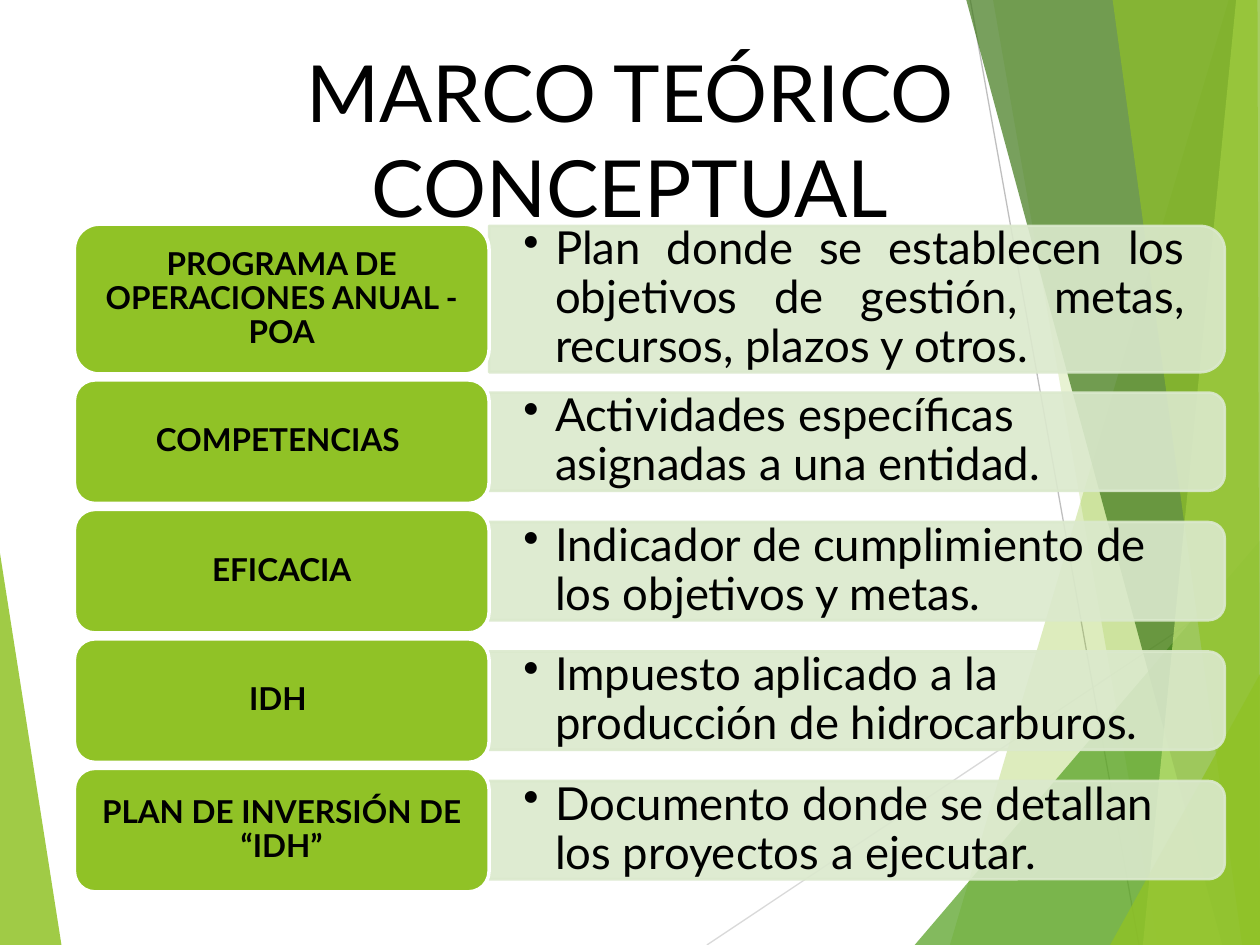
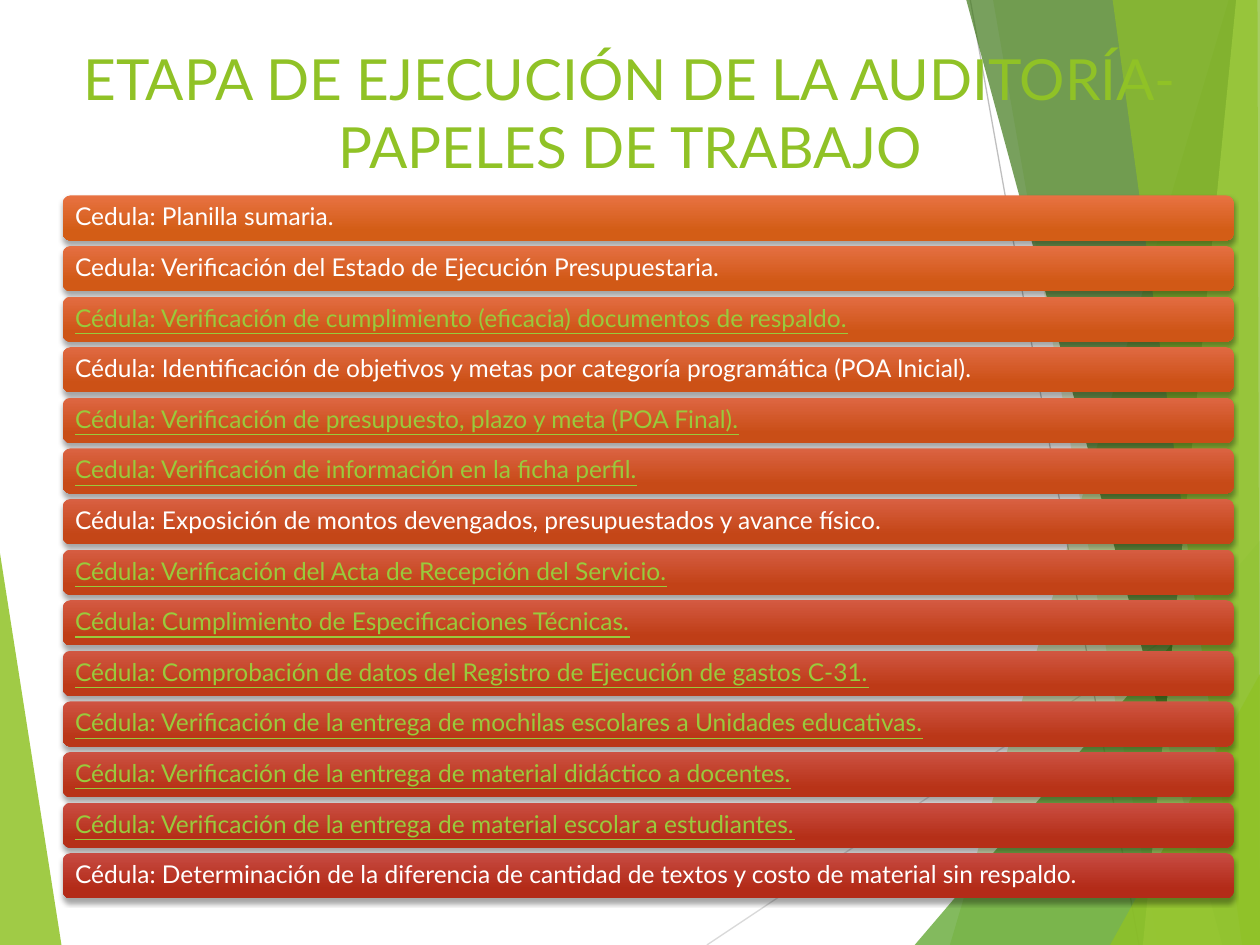
from dataclasses import dataclass
from pptx import Presentation
from pptx.dml.color import RGBColor
from pptx.enum.shapes import MSO_CONNECTOR, MSO_SHAPE
from pptx.enum.text import MSO_ANCHOR, MSO_AUTO_SIZE, PP_ALIGN
from pptx.oxml.ns import qn
from pptx.util import Cm, Pt
from lxml.etree import SubElement


@dataclass(frozen=True)
class Theme:
    font: str = "Lato"
    green: str = "90C226"
    leaf: str = "54A021"
    moss: str = "3F7819"
    lime: str = "C0E474"
    pale: str = "DBE9CD"
    link: str = "99CA3C"
    white: str = "FFFFFF"
    black: str = "000000"
    gleam: tuple = ("E87242", "C74B42")
    depth: tuple = ("D35D16", "B32B18")
    head: float = 45
    subhead: float = 32.4
    note: float = 26
    label: float = 18
    bar: float = 14


T = Theme()
WIDE, HIGH = 25.4, 19.05

FACETS = [
    (T.green, 85, [(0, 11.15), (1.24, HIGH), (0, HIGH)]),
    (T.green, 30, [(24.77, 0), (19.15, HIGH), (WIDE, HIGH), (WIDE, 0)]),
    (T.green, 20, [(20.02, 0), (23.34, HIGH), (WIDE, HIGH), (WIDE, 0)]),
    (T.leaf, 72, [(18.44, HIGH), (WIDE, 10.9), (WIDE, HIGH)]),
    (T.moss, 70, [(19.48, 0), (24.64, HIGH), (WIDE, HIGH), (WIDE, 0)]),
    (T.lime, 70, [(24.92, 0), (23.04, HIGH), (WIDE, HIGH), (WIDE, 0)]),
    (T.green, 65, [(22.43, 0), (25.04, HIGH), (WIDE, HIGH), (25.35, 0)]),
    (T.green, 80, [(22.38, HIGH), (WIDE, 13.59), (WIDE, HIGH)]),
]
RAYS = [
    ("D9D9D9", (14.25, HIGH, WIDE, 11.61)),
    ("BFBFBF", (19.56, 0, 22.96, HIGH)),
]

TERMS = [
    ("PROGRAMA DE OPERACIONES ANUAL - POA",
     "Plan donde se establecen los objetivos de gestión, metas, recursos, plazos y otros.",
     3.02, 2.95, PP_ALIGN.JUSTIFY),
    ("COMPETENCIAS ", "Actividades específicas asignadas a una entidad.",
     2.49, 1.98, PP_ALIGN.LEFT),
    ("EFICACIA", "Indicador de cumplimiento de los objetivos y metas.",
     2.49, 1.98, PP_ALIGN.LEFT),
    ("IDH ", "Impuesto aplicado a la producción de hidrocarburos.",
     2.49, 1.98, PP_ALIGN.LEFT),
    ("PLAN DE INVERSIÓN DE “IDH”", "Documento donde se detallan los proyectos a ejecutar.",
     2.49, 1.98, PP_ALIGN.LEFT),
]

PAPERS = [
    ("Cedula: Planilla sumaria.", False),
    ("Cedula: Verificación del Estado de Ejecución Presupuestaria.", False),
    ("Cédula: Verificación de cumplimiento (eficacia) documentos de respaldo.", True),
    ("Cédula: Identificación de objetivos y metas por categoría programática (POA Inicial).", False),
    ("Cédula: Verificación de presupuesto, plazo y meta (POA Final).", True),
    ("Cedula: Verificación de información en la ficha perfil.", True),
    ("Cédula: Exposición de montos devengados, presupuestados y avance físico.", False),
    ("Cédula: Verificación del Acta de Recepción del Servicio.", True),
    ("Cédula: Cumplimiento de Especificaciones Técnicas.", True),
    ("Cédula: Comprobación de datos del Registro de Ejecución de gastos C-31.", True),
    ("Cédula: Verificación de la entrega de mochilas escolares a Unidades educativas.", True),
    ("Cédula: Verificación de la entrega de material didáctico a docentes.", True),
    ("Cédula: Verificación de la entrega de material escolar a estudiantes.", True),
    ("Cédula: Determinación de la diferencia de cantidad de textos y costo de material sin respaldo.", False),
]


def rgb(code):
    return RGBColor.from_string(code)


def blend(pair, part):
    first, last = map(rgb, pair)
    return RGBColor(*(round(a + (b - a) * part) for a, b in zip(first, last)))


def fade(shape, percent):
    for tint in list(shape.element.spPr.iter(qn("a:srgbClr"))):
        SubElement(tint, qn("a:alpha")).set("val", str(percent * 1000))


def paint(shape, fill, line=None, width=0):
    shape.shadow.inherit = False
    shape.fill.solid()
    shape.fill.fore_color.rgb = rgb(fill)
    if line:
        shape.line.color.rgb = rgb(line)
        shape.line.width = Pt(width)
    else:
        shape.line.fill.background()


def write(shape, text, size, color, align=PP_ALIGN.LEFT, inset=(0.25, 0.13),
          anchor=MSO_ANCHOR.MIDDLE, space=0.9, bold=False, under=False):
    frame = shape.text_frame
    frame.text = text
    frame.word_wrap = True
    frame.auto_size = MSO_AUTO_SIZE.NONE
    frame.vertical_anchor = anchor
    frame.margin_left = frame.margin_right = Cm(inset[0])
    frame.margin_top = frame.margin_bottom = Cm(inset[1])
    para = frame.paragraphs[0]
    para.alignment = align
    para.line_spacing = space
    font = para.runs[0].font
    font.name, font.size, font.bold, font.underline = T.font, Pt(size), bold, under
    font.color.rgb = rgb(color)
    return para


def bullet(para):
    props = para._p.get_or_add_pPr()
    props.set("marL", str(Cm(0.64)))
    props.set("indent", str(Cm(-0.64)))
    SubElement(props, qn("a:buChar")).set("char", "•")


def draw_facet(slide, color, alpha, points):
    spots = [(Cm(x), Cm(y)) for x, y in points]
    pen = slide.shapes.build_freeform(*spots[0])
    pen.add_line_segments(spots[1:])
    facet = pen.convert_to_shape()
    paint(facet, color)
    fade(facet, alpha)


def draw_ray(slide, color, ends):
    ray = slide.shapes.add_connector(MSO_CONNECTOR.STRAIGHT, *map(Cm, ends))
    ray.line.color.rgb = rgb(color)
    ray.line.width = Pt(0.75)
    SubElement(ray.element.spPr, qn("a:effectLst"))


def new_slide(deck, text, size, color):
    slide = deck.slides.add_slide(deck.slide_layouts[5])
    draw_facet(slide, *FACETS[0])
    for ray in RAYS:
        draw_ray(slide, *ray)
    for facet in FACETS[1:]:
        draw_facet(slide, *facet)
    title = slide.shapes.title
    title.left, title.top, title.width, title.height = map(Cm, (1.27, 0.76, 22.86, 2.67))
    write(title, text, size, color, PP_ALIGN.CENTER, anchor=MSO_ANCHOR.TOP, space=1.0)
    slide.shapes.element.append(title.element)
    return slide


def add_terms(slide):
    left, split, right, gap = 1.5, 9.86, 24.69, 0.12
    top = 4.52
    for name, note, tall, thin, align in TERMS:
        mid = top + tall / 2
        long = right - split
        pane = slide.shapes.add_shape(
            MSO_SHAPE.ROUND_2_SAME_RECTANGLE,
            Cm((split + right - thin) / 2), Cm(mid - long / 2), Cm(thin), Cm(long))
        pane.rotation = 90
        paint(pane, T.pale, T.pale, 1.5)
        fade(pane, 90)
        box = slide.shapes.add_textbox(
            Cm(split), Cm(mid - thin / 2), Cm(long - 0.1), Cm(thin))
        bullet(write(box, note, T.note, T.black, align, (0.69, 0.36)))
        label = slide.shapes.add_shape(
            MSO_SHAPE.ROUNDED_RECTANGLE, Cm(left), Cm(top), Cm(split - left), Cm(tall))
        paint(label, T.green, T.white, 2)
        write(label, name, T.label, T.black, PP_ALIGN.CENTER, (0.33, 0.25), bold=True)
        top += tall + gap


def cast_shadow(shape):
    shape.shadow.inherit = False
    effects = shape.element.spPr.find(qn("a:effectLst"))
    shade = SubElement(effects, qn("a:outerShdw"), blurRad=str(Pt(3)), dist=str(Pt(2)),
                       dir="5400000", rotWithShape="0")
    tint = SubElement(shade, qn("a:srgbClr"), val=T.black)
    SubElement(tint, qn("a:alpha"), val="35000")


def add_papers(slide):
    left, top, wide, tall, step = 1.27, 3.94, 23.6, 0.91, 1.02
    for row, (text, linked) in enumerate(PAPERS):
        bar = slide.shapes.add_shape(
            MSO_SHAPE.ROUNDED_RECTANGLE, Cm(left), Cm(top + row * step), Cm(wide), Cm(tall))
        bar.line.fill.background()
        bar.fill.gradient()
        bar.fill.gradient_angle = 270
        part = row / (len(PAPERS) - 1)
        for stop, place, pair in zip(bar.fill.gradient_stops, (0, 0.78), (T.gleam, T.depth)):
            stop.position = place
            stop.color.rgb = blend(pair, part)
        cast_shadow(bar)
        write(bar, text, T.bar, T.link if linked else T.white, inset=(0.2, 0.15), under=linked)


def main():
    deck = Presentation()
    deck.slide_width, deck.slide_height = Cm(WIDE), Cm(HIGH)
    add_terms(new_slide(deck, "MARCO TEÓRICO CONCEPTUAL", T.head, T.black))
    add_papers(new_slide(deck, "ETAPA DE EJECUCIÓN DE LA AUDITORÍA-PAPELES DE TRABAJO",
                         T.subhead, T.green))
    deck.save("out.pptx")


if __name__ == "__main__":
    main()
